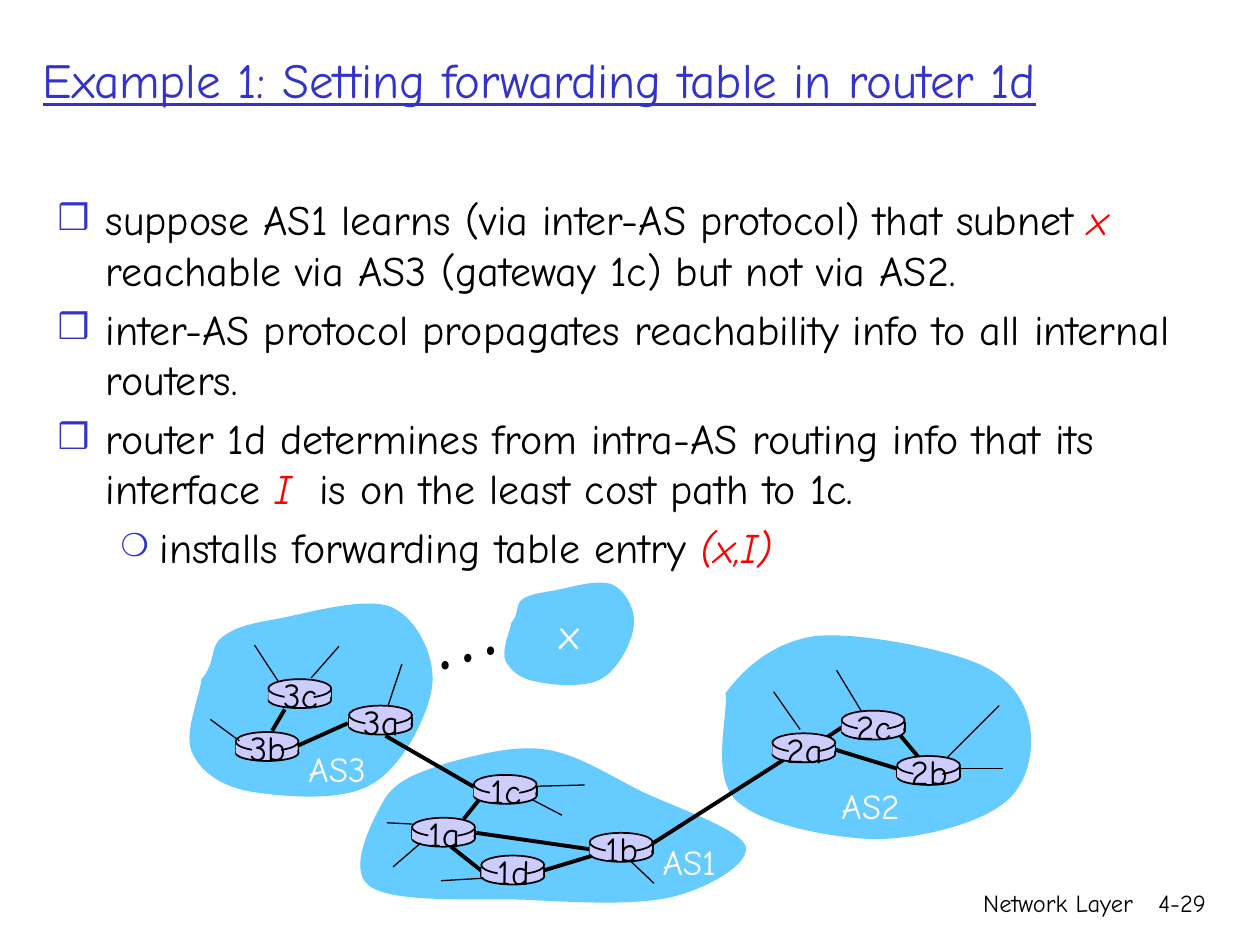
from lxml import etree
from pptx import Presentation
from pptx import util as u
from pptx.dml.color import RGBColor
from pptx.enum import shapes, text
from pptx.oxml.ns import qn

COLORS = {"ink": "000000", "accent": "3333CC", "mark": "FF0000",
          "cloud": "66CCFF", "router": "CCCCFF", "light": "FFFFFF"}
FONT = "Comic Neue"

CLOUDS = {
    "AS2": [(5.76, 5.5),
            (5.9, 5.31, 6.13, 5.1, 6.46, 5.05), (6.78, 5.01, 7.44, 5.14, 7.72, 5.25),
            (8.01, 5.36, 8.13, 5.55, 8.17, 5.74), (8.21, 5.93, 8.17, 6.23, 7.96, 6.38),
            (7.76, 6.54, 7.29, 6.66, 6.94, 6.66), (6.58, 6.65, 6.03, 6.54, 5.84, 6.35),
            (5.64, 6.15, 5.78, 5.68, 5.76, 5.5)],
    "AS3": [(1.6, 5.39),
            (1.72, 5.25, 1.66, 5.14, 1.76, 5.06), (1.86, 4.98, 1.98, 4.95, 2.21, 4.91),
            (2.43, 4.87, 2.9, 4.73, 3.11, 4.82), (3.31, 4.91, 3.46, 5.21, 3.43, 5.45),
            (3.4, 5.68, 3.19, 6.1, 2.94, 6.23), (2.7, 6.37, 2.21, 6.32, 1.97, 6.28),
            (1.73, 6.23, 1.58, 6.11, 1.52, 5.96), (1.46, 5.81, 1.59, 5.51, 1.6, 5.39)],
    "AS1": [(3.06, 6.33),
            (3.17, 6.17, 3.36, 6.12, 3.57, 6.05), (3.79, 5.99, 4.09, 5.91, 4.34, 5.95),
            (4.59, 5.99, 4.83, 6.15, 5.09, 6.28), (5.36, 6.41, 5.88, 6.58, 5.92, 6.72),
            (5.95, 6.86, 5.62, 7.05, 5.33, 7.12), (5.03, 7.19, 4.55, 7.16, 4.15, 7.14),
            (3.75, 7.13, 3.11, 7.17, 2.93, 7.03), (2.75, 6.9, 2.96, 6.5, 3.06, 6.33)],
    "x": [(4.06, 4.94),
          (4.12, 4.87, 4.09, 4.81, 4.14, 4.76), (4.2, 4.72, 4.26, 4.71, 4.38, 4.69),
          (4.5, 4.67, 4.75, 4.59, 4.86, 4.64), (4.97, 4.69, 5.05, 4.85, 5.03, 4.97),
          (5.02, 5.1, 4.9, 5.32, 4.77, 5.39), (4.64, 5.46, 4.38, 5.44, 4.26, 5.41),
          (4.13, 5.39, 4.05, 5.32, 4.01, 5.24), (3.98, 5.16, 4.05, 5, 4.06, 4.94)],
}
CLOUD_LABELS = [("AS3", 2.35, 5.88, 0.77, 0.43, 20), ("AS1", 5.16, 6.62, 0.72, 0.43, 20),
                ("AS2", 6.58, 6.18, 0.77, 0.43, 20), ("x", 4.34, 4.77, 0.4, 0.5, 24)]
ROUTERS = {"3b": (1.87, 5.91), "1d": (3.82, 6.89), "3a": (2.77, 5.7),
           "1c": (3.76, 6.25), "2a": (6.13, 5.92), "1a": (3.27, 6.59),
           "2c": (6.68, 5.74), "2b": (7.12, 6.1), "1b": (4.68, 6.71),
           "3c": (2.13, 5.49)}
LINKS = [(6.63, 5.95, 7.12, 6.1), (7.14, 5.83, 7.29, 6.01), (6.52, 5.88, 6.7, 5.76),
         (4.31, 6.91, 4.74, 6.78), (3.58, 6.72, 3.82, 6.91), (3.78, 6.61, 4.68, 6.74),
         (3.68, 6.5, 3.8, 6.35), (2.36, 5.92, 2.76, 5.74), (3.06, 5.84, 3.77, 6.25),
         (5.17, 6.7, 6.22, 6.03), (2.26, 5.63, 2.16, 5.8)]
STUBS = [(1.67, 5.71, 1.9, 5.88), (2.69, 5.13, 2.47, 5.38), (2.02, 5.12, 2.21, 5.41),
         (3.19, 5.27, 3.08, 5.6), (7.61, 6.1, 7.96, 6.1), (7.52, 6.01, 7.93, 5.6),
         (6.84, 5.65, 6.64, 5.32), (6.35, 5.79, 6.14, 5.49), (3.34, 6.69, 3.12, 6.88),
         (3.27, 6.54, 3.07, 6.53), (3.84, 6.97, 3.5, 6.99), (4.27, 6.24, 4.64, 6.23),
         (5, 6.83, 5.19, 7.01), (4.23, 6.35, 4.46, 6.47)]
POINTS = [
    (0, [("suppose AS1 learns (via inter-AS protocol) that subnet ", False), ("x", True),
         (" reachable via AS3 (gateway 1c) but not via AS2.", False)]),
    (0, [("inter-AS protocol propagates reachability info to all internal routers.", False)]),
    (0, [("router 1d determines from intra-AS routing info that its interface ", False),
         ("I", True), ("  is on the least cost path to 1c.", False)]),
    (1, [("installs forwarding table entry ", False), ("(x,I)", True)]),
]
BULLETS = [("❒", 0.38, 0.38, 85), ("❍", 0.81, 0.31, 75)]


def rgb(name):
    return RGBColor.from_string(COLORS[name])


def style_run(run, size, color):
    run.font.name = FONT
    run.font.size = u.Pt(size)
    run.font.color.rgb = rgb(color)


def add_label(slide, words, left, top, width, height, size, color="ink",
              align=text.PP_ALIGN.LEFT, wrap=False):
    label = slide.shapes.add_textbox(*map(u.Inches, (left, top, width, height)))
    label.text_frame.word_wrap = wrap
    label.text_frame.text = words
    line = label.text_frame.paragraphs[0]
    line.alignment = align
    style_run(line.runs[0], size, color)
    return label


def add_bullet(paragraph, level):
    mark, left, hang, percent = BULLETS[level]
    props = paragraph._p.get_or_add_pPr()
    props.set("marL", str(u.Inches(left)))
    props.set("indent", str(-u.Inches(hang)))
    color = etree.SubElement(props, qn("a:buClr"))
    etree.SubElement(color, qn("a:srgbClr"), val=COLORS["accent"])
    etree.SubElement(props, qn("a:buSzPct"), val=str(percent * 1000))
    etree.SubElement(props, qn("a:buFont"), typeface=FONT)
    etree.SubElement(props, qn("a:buChar"), char=mark)


def add_points(slide):
    body = slide.shapes.add_textbox(*map(u.Inches, (0.36, 1.49, 9.3, 3.66)))
    frame = body.text_frame
    frame.word_wrap = True
    for index, (level, pieces) in enumerate(POINTS):
        point = frame.add_paragraph() if index else frame.paragraphs[0]
        point.level = level
        point.space_before = u.Pt(4.8)
        add_bullet(point, level)
        for words, marked in pieces:
            run = point.add_run()
            run.text = words
            style_run(run, 24, "mark" if marked else "ink")
            run.font.italic = marked


def add_cloud(slide, outline):
    start, *curves = outline
    points = [tuple(map(u.Inches, curve[i:i + 2])) for curve in curves for i in (0, 2, 4)]
    builder = slide.shapes.build_freeform(*map(u.Inches, start))
    builder.add_line_segments(points, close=True)
    cloud = builder.convert_to_shape()
    paint(cloud, "cloud")
    segments = list(cloud._element.iter(qn("a:lnTo")))
    for first in range(0, len(points), 3):
        curve = etree.Element(qn("a:cubicBezTo"))
        segments[first].addprevious(curve)
        for segment in segments[first:first + 3]:
            curve.append(segment[0])
            segment.getparent().remove(segment)


def paint(shape, fill, outlined=False):
    shape.shadow.inherit = False
    shape.fill.solid()
    shape.fill.fore_color.rgb = rgb(fill)
    if outlined:
        shape.line.color.rgb = rgb("ink")
        shape.line.width = u.Pt(1)
    else:
        shape.line.fill.background()


def add_line(slide, ends, width):
    line = slide.shapes.add_connector(shapes.MSO_CONNECTOR.STRAIGHT, *map(u.Inches, ends))
    line.line.color.rgb = rgb("ink")
    line.line.width = u.Pt(width)
    etree.SubElement(line._element.spPr, qn("a:effectLst"))


def add_part(slide, kind, left, top, width, height, outlined=False):
    part = slide.shapes.add_shape(kind, *map(u.Inches, (left, top, width, height)))
    paint(part, "router", outlined)


def add_router(slide, name, x, y):
    oval, block = shapes.MSO_SHAPE.OVAL, shapes.MSO_SHAPE.RECTANGLE
    add_part(slide, oval, x, y, 0.5, 0.13, outlined=True)
    for side in (x, x + 0.5):
        add_line(slide, (side, y - 0.01, side, y + 0.07), 1)
    add_part(slide, block, x, y - 0.01, 0.49, 0.08)
    add_part(slide, oval, x, y - 0.1, 0.5, 0.15, outlined=True)
    add_part(slide, block, x + 0.13, y - 0.08, 0.23, 0.19)
    add_label(slide, name, x, y - 0.19, 0.51, 0.43, 20, align=text.PP_ALIGN.CENTER)


def main():
    deck = Presentation()
    deck.slide_width, deck.slide_height = u.Inches(10), u.Inches(7.5)
    slide = deck.slides.add_slide(deck.slide_layouts[6])

    right = text.PP_ALIGN.RIGHT
    add_label(slide, "Network Layer", 5.92, 7, 3.17, 0.5, 14, align=right, wrap=True)
    add_label(slide, "4-29", 8.93, 7, 0.74, 0.5, 14, align=right, wrap=True)
    title = add_label(slide, "Example 1: Setting forwarding table in router 1d",
                      0.24, 0, 9.32, 1.25, 28, "accent", wrap=True)
    title.text_frame.vertical_anchor = text.MSO_ANCHOR.MIDDLE
    title.text_frame.paragraphs[0].runs[0].font.underline = True
    add_points(slide)

    for outline in CLOUDS.values():
        add_cloud(slide, outline)
    for ends in LINKS:
        add_line(slide, ends, 2.25)
    for name, (x, y) in ROUTERS.items():
        add_router(slide, name, x, y)
    for ends in STUBS:
        add_line(slide, ends, 0.75)
    for words, left, top, width, height, size in CLOUD_LABELS:
        add_label(slide, words, left, top, width, height, size, "light")
    dots = add_label(slide, "…", 3.29, 4.47, 0.71, 1, 54)
    dots.rotation = 342.3

    deck.save("out.pptx")


if __name__ == "__main__":
    main()
